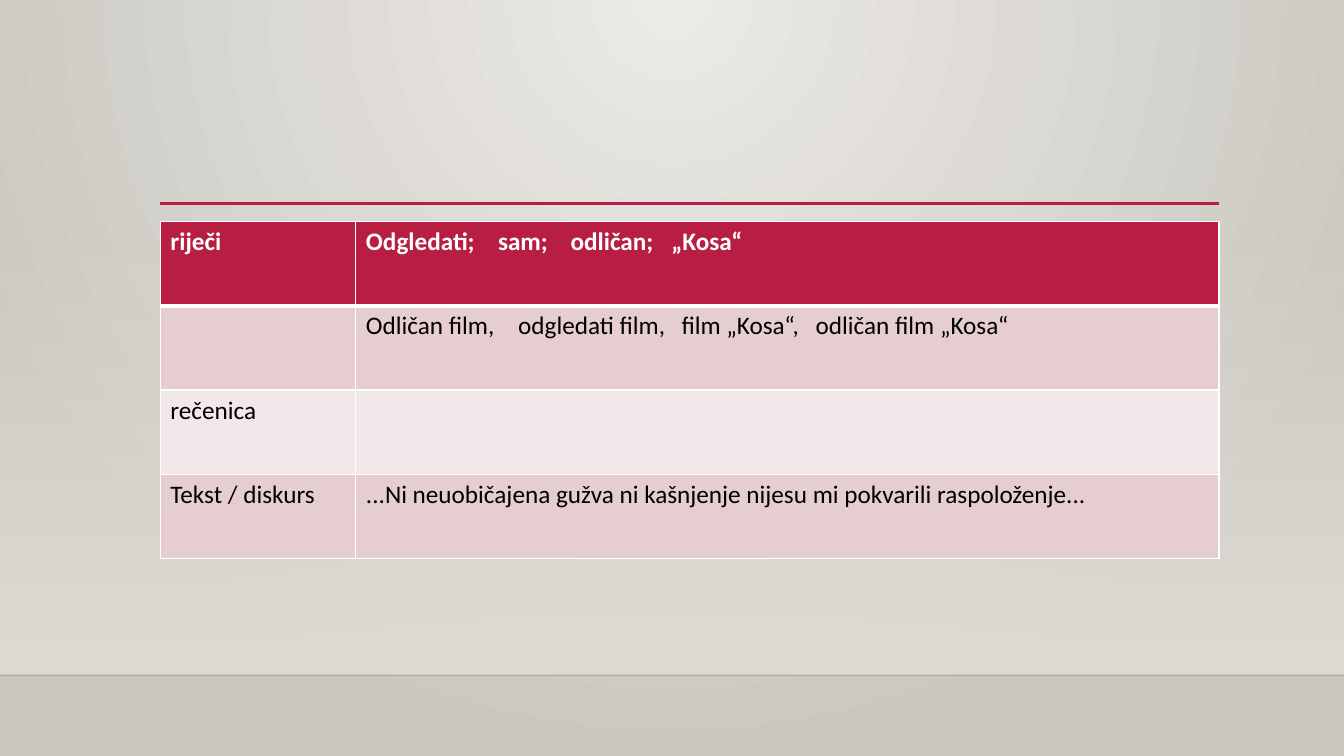
from dataclasses import dataclass

from lxml.etree import SubElement
from pptx import Presentation
from pptx.dml.color import RGBColor
from pptx.enum.shapes import MSO_CONNECTOR as CONNECTOR, MSO_SHAPE as SHAPE
from pptx.oxml.ns import qn
from pptx.util import Inches, Pt

WHITE = RGBColor(0xFF, 0xFF, 0xFF)
BLACK = RGBColor(0x00, 0x00, 0x00)
NEAR_BLACK = RGBColor(0x00, 0x00, 0x01)
CRIMSON = RGBColor(0xB7, 0x1E, 0x42)
ROSE = RGBColor(0xE6, 0xCD, 0xCF)
PALE_ROSE = RGBColor(0xF3, 0xE8, 0xE9)
GLOW = RGBColor(0xEC, 0xEA, 0xE7)
STONE = RGBColor(0xCA, 0xC7, 0xC1)
SAND = RGBColor(0xDF, 0xDB, 0xD5)

FONT = "Calibri"
SLIDE_W, SLIDE_H = Inches(13.33), Inches(7.5)

# Shares of the slide's width and height, in percent
LEFT, COLUMNS = 11.93, (14.55, 64.22)
RIGHT = LEFT + sum(COLUMNS)
RULE_Y, TABLE_Y, TABLE_H = 26.93, 29.33, 44.53
WALL_Y, FLOOR_Y = 29.47, 89.33


@dataclass
class Level:
    label: str
    examples: str
    fill: RGBColor
    tabs: tuple[float, ...] = ()
    header: bool = False


@dataclass
class Rule:
    x1: float
    x2: float
    y: float
    color: RGBColor
    width: float
    opacity: int = 100


LEVELS = [
    Level("riječi", "Odgledati;\tsam;\todličan;\t„Kosa“", CRIMSON,
          (1.31, 2.03, 3.03), header=True),
    Level("", "Odličan film,\todgledati film,\tfilm „Kosa“,\todličan film „Kosa“",
          ROSE, (1.51, 3.13, 4.46)),
    Level("rečenica", "", PALE_ROSE),
    Level("Tekst / diskurs",
          "...Ni neuobičajena gužva ni kašnjenje nijesu mi pokvarili raspoloženje...",
          ROSE),
]
RULES = [
    Rule(0, 100, FLOOR_Y, NEAR_BLACK, 1, opacity=20),
    Rule(LEFT, RIGHT, RULE_Y, CRIMSON, 2.5),
]


def px(share: float) -> int:
    """Length for a percentage of the slide's width."""
    return round(SLIDE_W * share / 100)


def py(share: float) -> int:
    """Length for a percentage of the slide's height."""
    return round(SLIDE_H * share / 100)


def set_opacity(parent, percent: int) -> None:
    color = next(parent.iter(qn("a:srgbClr")))
    SubElement(color, qn("a:alpha"), val=str(percent * 1000))


def set_stops(fill, *colors: RGBColor) -> None:
    fill.gradient()
    for stop, color in zip(fill.gradient_stops, colors):
        stop.color.rgb = color


def paint_background(slide) -> None:
    """Radial gradient that spreads from the middle of the top edge."""
    set_stops(slide.background.fill, GLOW, STONE)
    grad = next(slide.background._cSld.iter(qn("a:gradFill")))
    grad.remove(grad.find(qn("a:lin")))
    circle = SubElement(grad, qn("a:path"), path="circle")
    SubElement(circle, qn("a:fillToRect"), l="43000", t="0", r="43000", b="100000")


def add_wall(slide) -> None:
    """Band that fades in downwards to the floor line."""
    sp = slide.shapes.add_shape(SHAPE.RECTANGLE, 0, py(WALL_Y), SLIDE_W,
                                py(FLOOR_Y - WALL_Y))
    sp.shadow.inherit = False
    sp.line.fill.background()
    set_stops(sp.fill, SAND, SAND)
    sp.fill.gradient_angle = 270
    set_opacity(sp._element.spPr, 0)


def add_rule(slide, rule: Rule) -> None:
    y = py(rule.y)
    cxn = slide.shapes.add_connector(CONNECTOR.STRAIGHT, px(rule.x1), y, px(rule.x2), y)
    cxn.line.color.rgb = rule.color
    cxn.line.width = Pt(rule.width)
    if rule.opacity < 100:
        set_opacity(cxn._element.spPr, rule.opacity)
    SubElement(cxn._element.spPr, qn("a:effectLst"))


def write(tf, text: str, *, color: RGBColor, bold: bool = False, size: float = 18,
          tabs: tuple[float, ...] = ()) -> None:
    p = tf.paragraphs[0]
    if tabs:
        tab_list = SubElement(p._p.get_or_add_pPr(), qn("a:tabLst"))
        for pos in tabs:
            SubElement(tab_list, qn("a:tab"), pos=str(Inches(pos)), algn="l")
    p.font.size = Pt(size)
    if text:
        r = p.add_run()
        r.text = text
        r.font.name, r.font.size, r.font.bold = FONT, Pt(size), bold
        r.font.color.rgb = color


def set_borders(cell, **widths: float) -> None:
    """White borders; widths in points for L, R, T and B, in that order."""
    for side, width in widths.items():
        ln = SubElement(cell._tc.get_or_add_tcPr(), qn(f"a:ln{side}"), w=str(Pt(width)))
        SubElement(SubElement(ln, qn("a:solidFill")), qn("a:srgbClr"), val=str(WHITE))


def add_levels_table(slide) -> None:
    table = slide.shapes.add_table(len(LEVELS), len(COLUMNS), px(LEFT), py(TABLE_Y),
                                   px(sum(COLUMNS)), py(TABLE_H)).table
    for column, share in zip(table.columns, COLUMNS):
        column.width = px(share)
    for i, level in enumerate(LEVELS):
        table.rows[i].height = py(TABLE_H / len(LEVELS))
        below_header = i > 0 and LEVELS[i - 1].header
        for cell, text, tabs in zip(table.rows[i].cells, (level.label, level.examples),
                                    ((), level.tabs)):
            set_borders(cell, L=1, R=1, T=3 if below_header else 1,
                        B=3 if level.header else 1)
            cell.fill.solid()
            cell.fill.fore_color.rgb = level.fill
            write(cell.text_frame, text, color=WHITE if level.header else BLACK,
                  bold=level.header, tabs=tabs)


def main() -> None:
    prs = Presentation()
    prs.slide_width, prs.slide_height = SLIDE_W, SLIDE_H
    slide = prs.slides.add_slide(prs.slide_layouts[6])
    paint_background(slide)
    add_wall(slide)
    for rule in RULES:
        add_rule(slide, rule)
    add_levels_table(slide)
    prs.save("out.pptx")


if __name__ == "__main__":
    main()
